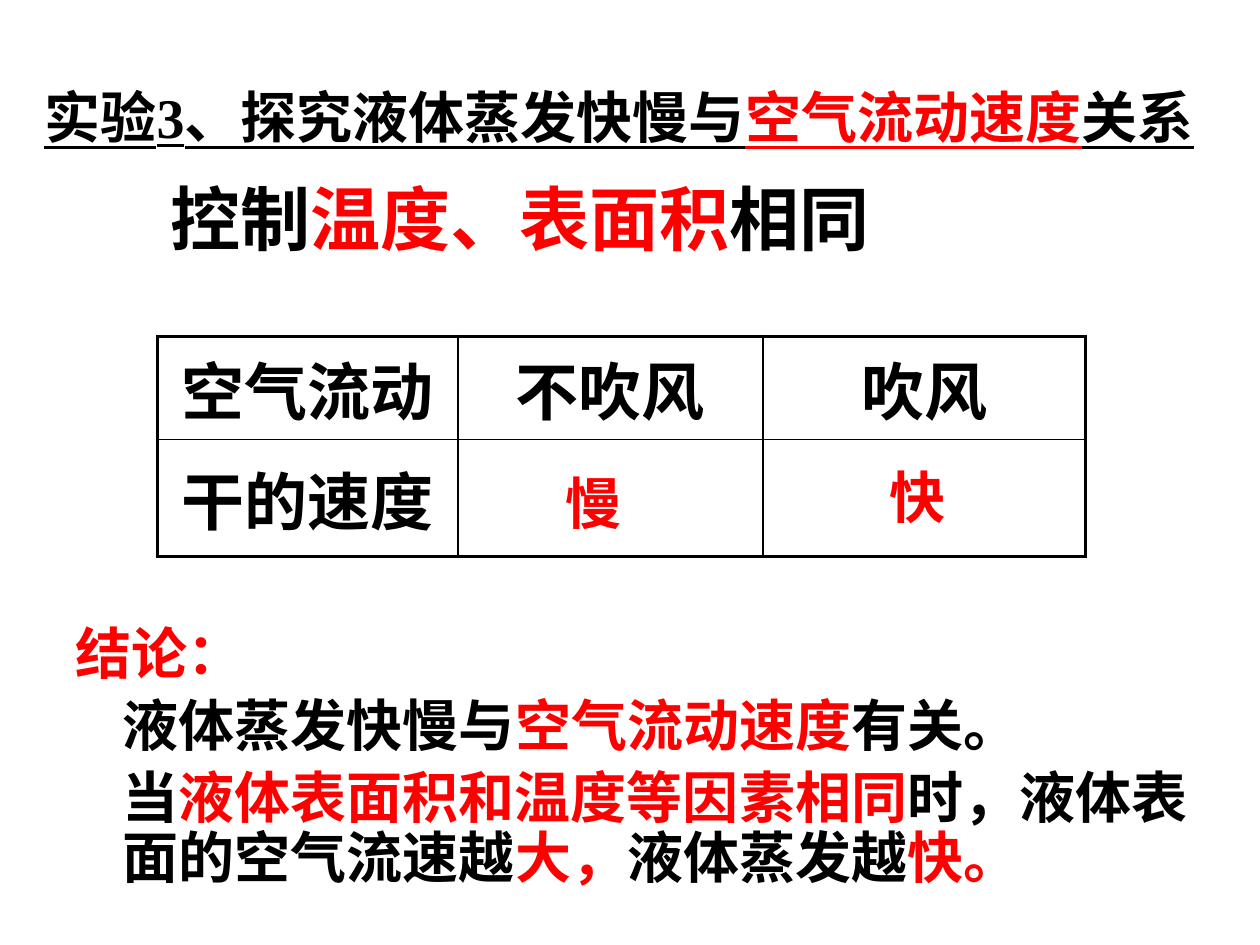
from dataclasses import dataclass

from pptx import Presentation
from pptx.dml.color import RGBColor
from pptx.enum.text import MSO_ANCHOR, MSO_AUTO_SIZE, PP_ALIGN
from pptx.oxml.ns import qn
from pptx.util import Cm, Pt
from lxml import etree

BLACK = RGBColor(0, 0, 0)
RED = RGBColor(255, 0, 0)
FONT_NAME = "Times New Roman"
LEFT, CENTER = PP_ALIGN.LEFT, PP_ALIGN.CENTER
MIDDLE, TOP = MSO_ANCHOR.MIDDLE, MSO_ANCHOR.TOP
NO_FIT, GROW = MSO_AUTO_SIZE.NONE, MSO_AUTO_SIZE.SHAPE_TO_FIT_TEXT
TWO_CONTENT_LAYOUT = 3
HANGING = Cm(0.95)
OUTER_LINE, INNER_LINE = Pt(2.25), Pt(1)


@dataclass
class Span:
    text: str
    color: RGBColor = BLACK


@dataclass
class Box:
    left: float
    top: float
    width: float
    height: float

    def lengths(self) -> tuple:
        return Cm(self.left), Cm(self.top), Cm(self.width), Cm(self.height)


@dataclass
class Answer:
    box: Box
    text: str


TITLE = [Span("实验3、探究液体蒸发快慢与"), Span("空气流动速度", RED), Span("关系")]
CONTROL = [Span("控制"), Span("温度、表面积", RED), Span("相同")]
CONCLUSION = [
    [Span("结论：", RED)],
    [Span("液体蒸发快慢与"), Span("空气流动速度", RED), Span("有关。")],
    [Span("当"), Span("液体表面积和温度等因素相同", RED),
     Span("时，液体表面的空气流速越"), Span("大，", RED),
     Span("液体蒸发越"), Span("快。", RED)],
]
TABLE_ROWS = [["空气流动", "不吹风", "吹风"], ["干的速度", "", ""]]
COLUMN_WIDTHS = [6.05, 6.15, 6.5]
ROW_HEIGHTS = [2.08, 2.36]
ANSWERS = [
    Answer(Box(17.68, 9.2, 1.4, 1.6), "快"),
    Answer(Box(11.15, 9.32, 2.01, 1.6), "慢"),
]


def set_all(target, values: dict) -> None:
    for name, value in values.items():
        setattr(target, name, value)


def write_spans(paragraph, spans: list[Span], size: float, underline: bool = False) -> None:
    for span in spans:
        run = paragraph.add_run()
        run.text = span.text
        set_all(run.font, {"name": FONT_NAME, "size": Pt(size), "bold": True,
                           "underline": underline})
        run.font.color.rgb = span.color


def place(shape, box: Box, frame_format: dict):
    """Move a shape, format its text frame and return that frame."""
    set_all(shape, dict(zip(("left", "top", "width", "height"), box.lengths())))
    set_all(shape.text_frame, {"word_wrap": True, **frame_format})
    return shape.text_frame


def fill_body(shape, box: Box, paragraphs: list[list[Span]], size: float) -> None:
    """Write unbulleted paragraphs; those after the first are indented."""
    frame = place(shape, box, {"auto_size": NO_FIT, "vertical_anchor": TOP})
    for index, spans in enumerate(paragraphs):
        paragraph = frame.add_paragraph() if index else frame.paragraphs[0]
        set_all(paragraph, {"line_spacing": 0.9, "space_before": Pt(size * 0.2),
                            "alignment": LEFT})
        properties = paragraph._p.get_or_add_pPr()
        properties.set("marL", str(HANGING))
        properties.set("indent", str(0 if index else -HANGING))
        etree.SubElement(properties, qn("a:buNone"))
        write_spans(paragraph, spans, size)


def border_cell(cell, widths: dict[str, int]) -> None:
    properties = cell._tc.get_or_add_tcPr()
    for position, (side, width) in enumerate(widths.items()):
        line = etree.Element(qn(f"a:ln{side}"), w=str(width))
        fill = etree.SubElement(line, qn("a:solidFill"))
        etree.SubElement(fill, qn("a:srgbClr"), val=str(BLACK))
        properties.insert(position, line)


def add_result_table(slide, box: Box) -> None:
    last_row, last_column = len(ROW_HEIGHTS) - 1, len(COLUMN_WIDTHS) - 1
    table = slide.shapes.add_table(last_row + 1, last_column + 1, *box.lengths()).table
    set_all(table, {"first_row": False, "horz_banding": False})
    for column, width in zip(table.columns, COLUMN_WIDTHS):
        column.width = Cm(width)
    for row, height in zip(table.rows, ROW_HEIGHTS):
        row.height = Cm(height)
    for r, texts in enumerate(TABLE_ROWS):
        for c, text in enumerate(texts):
            cell = table.cell(r, c)
            set_all(cell, {"vertical_anchor": MIDDLE, "margin_left": 0, "margin_right": 0,
                           "margin_top": 0, "margin_bottom": 0})
            cell.fill.background()
            on_edge = {"L": c == 0, "R": c == last_column, "T": r == 0, "B": r == last_row}
            border_cell(cell, {side: OUTER_LINE if edge else INNER_LINE
                               for side, edge in on_edge.items()})
            if text:
                paragraph = cell.text_frame.paragraphs[0]
                paragraph.alignment = CENTER
                write_spans(paragraph, [Span(text)], 36)


def add_answer(slide, answer: Answer) -> None:
    textbox = slide.shapes.add_textbox(*answer.box.lengths())
    frame = place(textbox, answer.box, {"auto_size": GROW})
    write_spans(frame.paragraphs[0], [Span(answer.text, RED)], 32)


def main() -> None:
    presentation = Presentation()
    set_all(presentation, {"slide_width": Cm(25.4), "slide_height": Cm(19.05)})
    slide = presentation.slides.add_slide(presentation.slide_layouts[TWO_CONTENT_LAYOUT])
    title, control, conclusion = slide.placeholders

    heading = place(title, Box(0.64, 0.76, 24.13, 3.18),
                    {"auto_size": NO_FIT, "vertical_anchor": MIDDLE}).paragraphs[0]
    heading.alignment = LEFT
    write_spans(heading, TITLE, 32, underline=True)
    fill_body(control, Box(3.18, 3.61, 19.89, 2.11), [CONTROL], 40)
    fill_body(conclusion, Box(1.27, 12.5, 23.29, 5.72), CONCLUSION, 32)
    add_result_table(slide, Box(3.18, 6.78, sum(COLUMN_WIDTHS), sum(ROW_HEIGHTS)))
    for answer in ANSWERS:
        add_answer(slide, answer)
    presentation.save("out.pptx")


if __name__ == "__main__":
    main()
